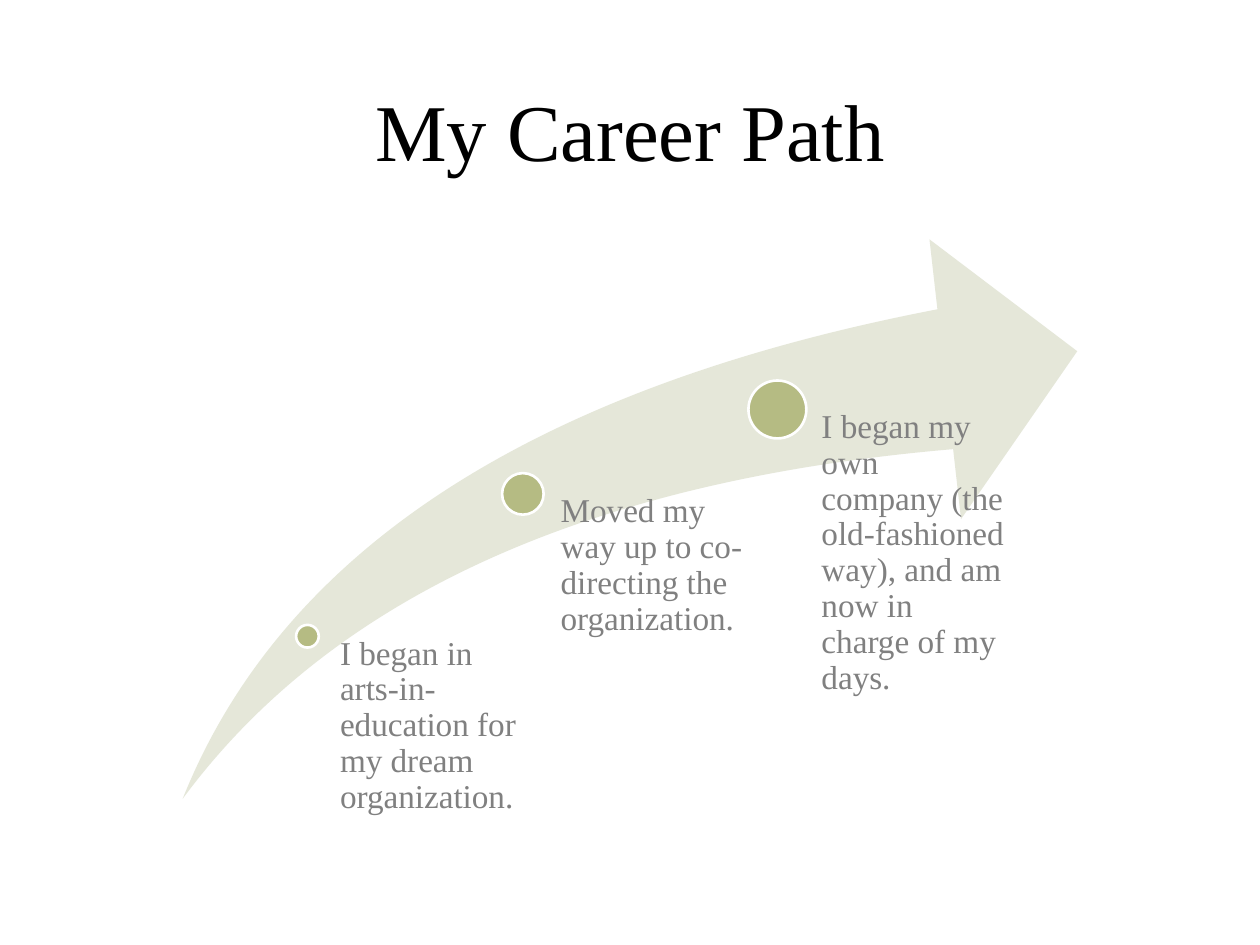
from pptx import Presentation
from pptx.dml.color import RGBColor
from pptx.enum.shapes import MSO_SHAPE
from pptx.enum.text import MSO_ANCHOR, PP_ALIGN
from pptx.util import Inches, Pt

COLORS = {"title": "000000", "label": "808080", "arrow": "E5E7D9",
          "marker": "B5BB83", "outline": "FFFFFF"}
FONT = "Times New Roman"

# Marker centre (x, y) within the arrow box, diameter, label left, width, inset, text
MILESTONES = [
    (0.99, 3.15, 0.18, 1.15, 1.65, 0.1,
     "I began in arts-in-education for my dream organization."),
    (2.7, 2.02, 0.33, 2.82, 1.7, 0.18,
     "Moved my way up to co-directing the organization."),
    (4.72, 1.35, 0.46, 4.83, 1.7, 0.24,
     "I began my own company (the old-fashioned way), and am now in charge of my days."),
]


def add_text(slide, text, left, top, width, height, *, size, color,
             align=PP_ALIGN.LEFT, anchor=MSO_ANCHOR.TOP, inset=0, spacing=1.0):
    box = slide.shapes.add_textbox(Inches(left), Inches(top), Inches(width), Inches(height))
    frame = box.text_frame
    frame.word_wrap = True
    frame.vertical_anchor = anchor
    frame.margin_left = Inches(inset)
    frame.margin_top = frame.margin_right = frame.margin_bottom = 0
    paragraph = frame.paragraphs[0]
    paragraph.alignment = align
    paragraph.line_spacing = spacing
    run = paragraph.add_run()
    run.text = text
    run.font.name = FONT
    run.font.size = Pt(size)
    run.font.color.rgb = RGBColor.from_string(COLORS[color])


def add_filled(slide, preset, left, top, width, height, fill, outline=None):
    shape = slide.shapes.add_shape(
        preset, Inches(left), Inches(top), Inches(width), Inches(height))
    shape.shadow.inherit = False
    shape.fill.solid()
    shape.fill.fore_color.rgb = RGBColor.from_string(COLORS[fill])
    if outline:
        shape.line.color.rgb = RGBColor.from_string(COLORS[outline])
        shape.line.width = Pt(1.5)
    else:
        shape.line.fill.background()
    return shape


def add_title(slide, left, top, width, height):
    add_text(slide, "My Career Path", left, top, width, height, size=46,
             color="title", align=PP_ALIGN.CENTER, anchor=MSO_ANCHOR.MIDDLE)


def add_career_path(slide, left, top, width, height):
    # Rising arrow
    arrow = add_filled(slide, MSO_SHAPE.SWOOSH_ARROW, left, top, width, height, "arrow")
    arrow.adjustments[0] = arrow.adjustments[1] = 0.25

    # Each label hangs from its marker's centre to the foot of the arrow
    for x, y, diameter, label_x, label_width, inset, text in MILESTONES:
        add_filled(slide, MSO_SHAPE.OVAL, left + x - diameter / 2,
                   top + y - diameter / 2, diameter, diameter, "marker", "outline")
        add_text(slide, text, left + label_x, top + y, label_width, height - y,
                 size=19, color="label", inset=inset, spacing=0.9)


def main():
    presentation = Presentation()
    presentation.slide_width = Inches(10)
    presentation.slide_height = Inches(7.5)
    slide = presentation.slides.add_slide(presentation.slide_layouts[6])
    add_title(slide, 1, 0.55, 8, 0.95)
    add_career_path(slide, 1.45, 1.9, 7.1, 4.44)
    presentation.save("out.pptx")


if __name__ == "__main__":
    main()
